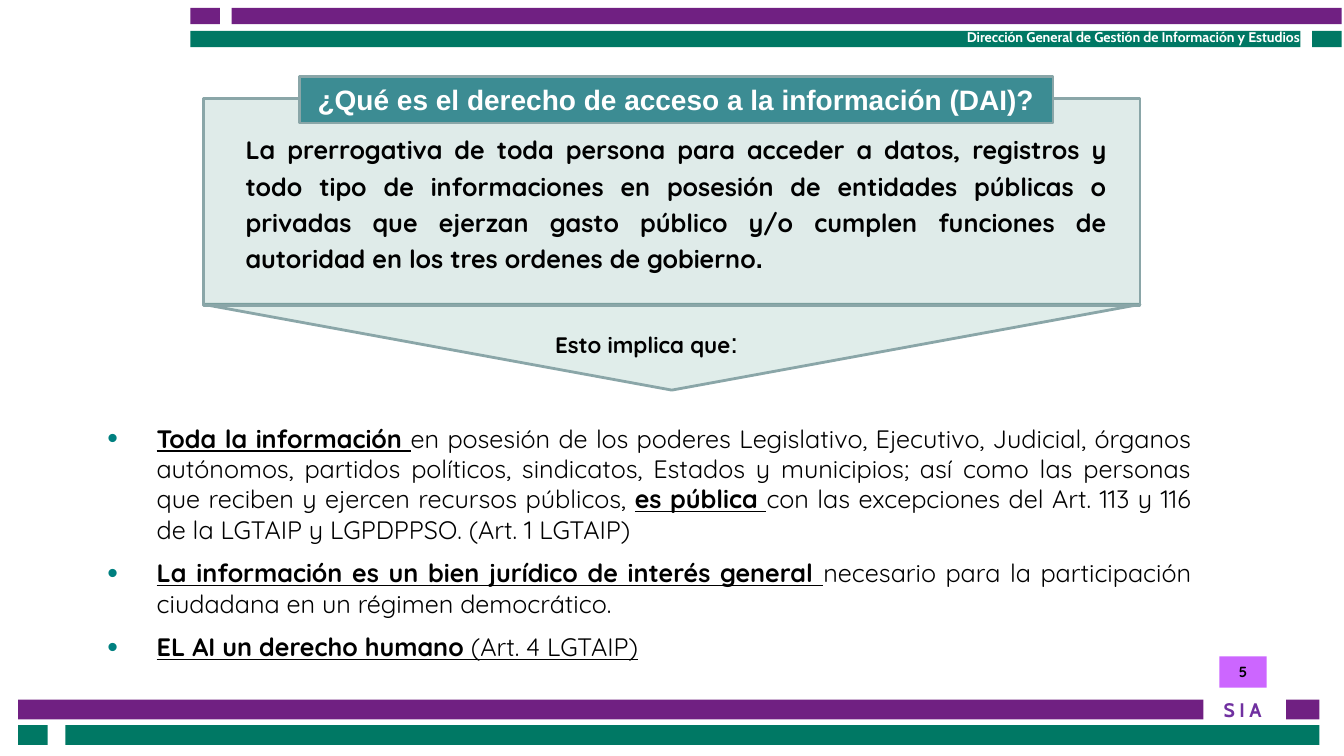
from lxml import etree
from pptx import Presentation
from pptx.dml.color import RGBColor
from pptx.enum.shapes import MSO_SHAPE
from pptx.enum.text import MSO_ANCHOR, PP_ALIGN
from pptx.oxml.ns import qn
from pptx.util import Cm, Pt

RECTANGLE = MSO_SHAPE.RECTANGLE
TRIANGLE = MSO_SHAPE.ISOSCELES_TRIANGLE
TOP, MIDDLE = MSO_ANCHOR.TOP, MSO_ANCHOR.MIDDLE
LEFT, CENTER, RIGHT, JUSTIFY = PP_ALIGN.LEFT, PP_ALIGN.CENTER, PP_ALIGN.RIGHT, PP_ALIGN.JUSTIFY

COLORS = {
    "purple": "702082", "green": "007864", "violet": "7030A0", "lilac": "CC66FF",
    "teal": "3C8C93", "pointer": "25836D", "panel": "227864", "outline": "8AA6A8",
    "bullet": "008080", "white": "FFFFFF", "black": "000000",
}
BODY = {"name": "Quicksand", "size": Pt(18), "bold": False, "color": "black"}
STRONG = {**BODY, "bold": True}
KEY = {**STRONG, "underline": True}
HEADING = {"name": "Arial", "size": Pt(20), "bold": True, "color": "white"}
BRAND = {"name": "Cabin", "size": Pt(14), "bold": True, "color": "violet"}

DEFINITION = (
    "La prerrogativa de toda persona para acceder a datos, registros y todo tipo de "
    "informaciones en posesión de entidades públicas o privadas que ejerzan gasto público "
    "y/o cumplen funciones de autoridad en los tres ordenes de gobierno"
)
IMPLICATIONS = [
    [("Toda la información ", KEY),
     ("en posesión de los poderes Legislativo, Ejecutivo, Judicial, órganos autónomos, "
      "partidos políticos, sindicatos, Estados y municipios; así como las personas que "
      "reciben y ejercen recursos públicos, ", BODY),
     ("es pública ", KEY),
     ("con las excepciones del Art. 113 y 116 de la LGTAIP y LGPDPPSO. (Art. 1 LGTAIP)", BODY)],
    [("La información es un bien jurídico de interés general ", KEY),
     ("necesario para la participación ciudadana en un régimen democrático.", BODY)],
    [("EL AI un derecho humano ", KEY),
     ("(Art. 4 LGTAIP)", {**BODY, "underline": True})],
]


def rgb(name):
    return RGBColor.from_string(COLORS[name])


def add_block(slide, box, fill, kind=RECTANGLE, outline=None, opacity=None):
    block = slide.shapes.add_shape(kind, *map(Cm, box))
    block.shadow.inherit = False
    block.fill.solid()
    block.fill.fore_color.rgb = rgb(fill)
    if opacity:
        tint = block.fill._xPr.find(".//" + qn("a:srgbClr"))
        etree.SubElement(tint, qn("a:alpha"), val=str(opacity * 1000))
    if outline:
        block.line.color.rgb = rgb(outline)
        block.line.width = Pt(2)
    else:
        block.line.fill.background()
    return block


def write(paragraph, runs, **layout):
    for attribute, value in layout.items():
        setattr(paragraph, attribute, value)
    for words, style in runs:
        run = paragraph.add_run()
        run.text = words
        for attribute, value in style.items():
            if attribute == "color":
                run.font.color.rgb = rgb(value)
            else:
                setattr(run.font, attribute, value)


def add_text(slide, box, wrap=True):
    frame = slide.shapes.add_textbox(*map(Cm, box)).text_frame
    frame.word_wrap = wrap
    frame.vertical_anchor = TOP
    return frame


def label(block, runs):
    frame = block.text_frame
    frame.word_wrap = True
    frame.vertical_anchor = MIDDLE
    frame.margin_left = frame.margin_right = 0
    write(frame.paragraphs[0], runs, alignment=CENTER)


def add_bullet(paragraph):
    properties = paragraph._p.get_or_add_pPr()
    properties.set("marL", str(Cm(1.24)))
    properties.set("indent", str(-Cm(1.24)))
    color = etree.SubElement(properties, qn("a:buClr"))
    etree.SubElement(color, qn("a:srgbClr"), val=COLORS["bullet"])
    etree.SubElement(properties, qn("a:buSzPct"), val="120000")
    etree.SubElement(properties, qn("a:buFont"), typeface="Arial")
    etree.SubElement(properties, qn("a:buChar"), char="•")


def add_header(slide, box):
    left, top, width, height = box
    tab, gap, bar = 0.74, 0.3, 0.41
    long_bar = width - tab - gap
    lower = top + height - bar
    add_block(slide, (left, top, tab, bar), "purple")
    add_block(slide, (left + tab + gap, top, long_bar, bar), "purple")
    add_block(slide, (left, lower, long_bar, bar), "green")
    add_block(slide, (left + width - tab, lower, tab, bar), "green")
    office = add_text(slide, (left + width - 12.88, lower - 0.18, 12.07, 0.69))
    write(office.paragraphs[0],
          [("Dirección General de Gestión de Información y Estudios",
            {**BRAND, "size": Pt(10), "color": "white"})], alignment=RIGHT)


def add_footer(slide, box):
    left, top, width, height = box
    tab, end, bar = 0.74, 0.84, 0.5
    lower = top + height - bar
    add_block(slide, (left, top, width - 2.92, bar), "purple")
    add_block(slide, (left + width - end, top, end, bar), "purple")
    add_block(slide, (left, lower, tab, bar), "green")
    add_block(slide, (left + 1.19, lower, width - 1.19, bar), "green")
    acronym = add_text(slide, (left + width - 2.8, top - 0.18, 1.73, 0.86))
    write(acronym.paragraphs[0], [("S I A", BRAND)], alignment=CENTER)
    page = add_block(slide, (left + width - 2.52, top - 1.09, 1.19, 0.79), "lilac")
    label(page, [("5", {**STRONG, "size": Pt(10.5)})])


def add_definition(slide, box):
    left, top, width, height = box
    panel_top, panel_height, pointer_height = top + 0.56, 5.2, 2.16
    pointer = add_block(slide, (left, top + height - pointer_height, width, pointer_height),
                        "pointer", TRIANGLE, "outline", 14)
    pointer.rotation = 180
    add_block(slide, (left, panel_top, width, panel_height), "panel",
              outline="outline", opacity=14)
    question = add_block(slide, (left + 2.41, top, 19, 1.17), "teal", outline="outline")
    label(question, [("¿Qué es el derecho de acceso a la información (DAI)?", HEADING)])
    meaning = add_text(slide, (left + 0.81, top + 1.19, width - 1.4, 3.96))
    write(meaning.paragraphs[0], [(DEFINITION, STRONG), (".", {**STRONG, "name": "Arial"})],
          alignment=JUSTIFY, line_spacing=1.2)
    lead_in = add_text(slide, (left + 8.61, top + 6.15, 5.26, 1.12), wrap=False)
    write(lead_in.paragraphs[0],
          [("Esto implica que", {**STRONG, "size": Pt(16)}),
           (":", {**HEADING, "bold": False, "color": "black"})], alignment=LEFT)


def add_implications(slide, box):
    frame = add_text(slide, box)
    for index, runs in enumerate(IMPLICATIONS):
        paragraph = frame.add_paragraph() if index else frame.paragraphs[0]
        add_bullet(paragraph)
        write(paragraph, runs, alignment=JUSTIFY, space_after=Pt(6),
              space_before=Pt(3.6 if index else 0))


def main():
    deck = Presentation()
    deck.slide_width, deck.slide_height = Cm(33.87), Cm(19.05)
    slide = deck.slides.add_slide(deck.slide_layouts[6])
    add_header(slide, (4.8, 0.2, 29.01, 0.99))
    add_footer(slide, (0.46, 17.63, 32.79, 1.14))
    add_definition(slide, (5.13, 1.93, 23.6, 7.9))
    add_implications(slide, (2.46, 10.54, 27.81, 6.38))
    deck.save("out.pptx")


if __name__ == "__main__":
    main()
